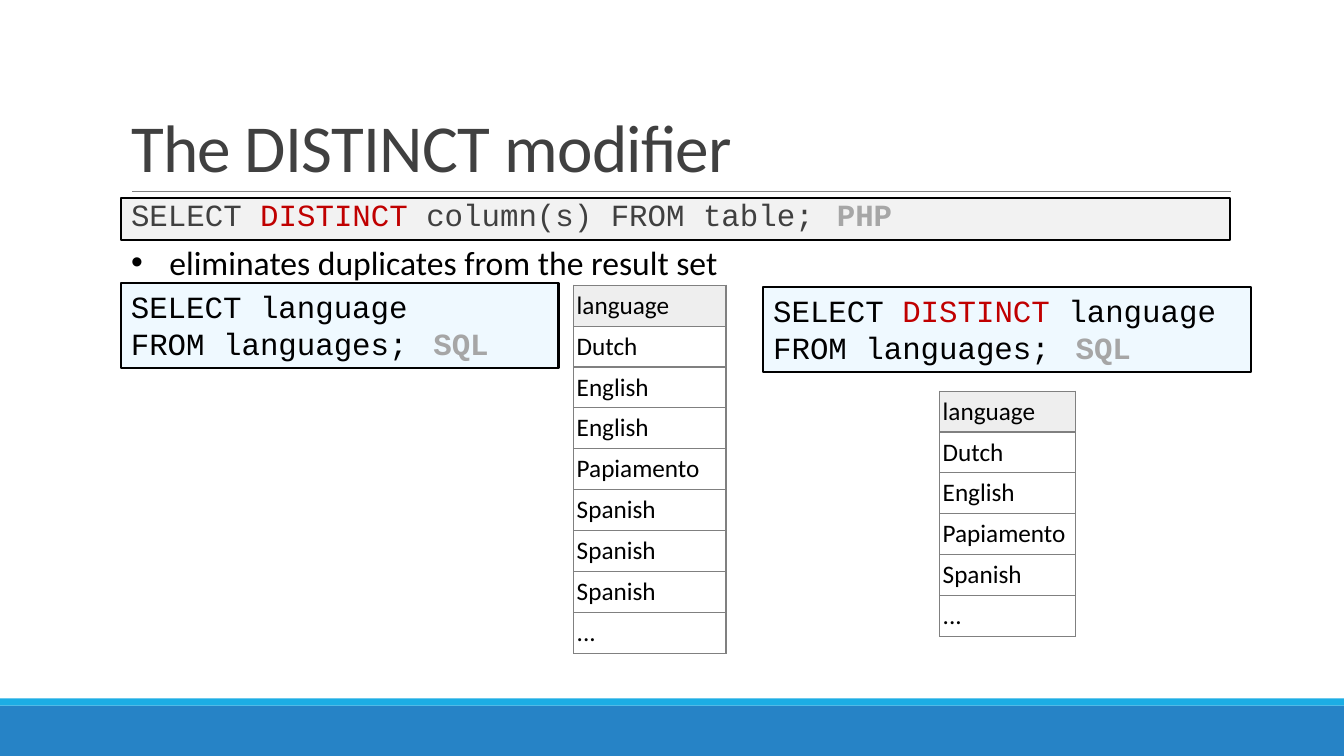
from dataclasses import dataclass

from lxml import etree
from pptx import Presentation
from pptx.dml.color import RGBColor
from pptx.enum.shapes import MSO_CONNECTOR, MSO_SHAPE
from pptx.enum.text import MSO_ANCHOR, MSO_AUTO_SIZE, PP_ALIGN
from pptx.oxml.ns import qn
from pptx.util import Inches, Pt

RECTANGLE = MSO_SHAPE.RECTANGLE
STRAIGHT = MSO_CONNECTOR.STRAIGHT
TOP, MIDDLE, BOTTOM = MSO_ANCHOR.TOP, MSO_ANCHOR.MIDDLE, MSO_ANCHOR.BOTTOM
NO_AUTOFIT = MSO_AUTO_SIZE.NONE
LEFT = PP_ALIGN.LEFT
TWO_CONTENT_LAYOUT = 3


@dataclass(frozen=True)
class Theme:
    prose_font: str = "Calibri"
    code_font: str = "Courier New"
    title_size: int = 48
    list_size: int = 24
    code_size: int = 22
    cell_size: int = 18
    black: str = "000000"
    white: str = "FFFFFF"
    soft_black: str = "404040"
    keyword: str = "C00000"
    tag: str = "A6A6A6"
    rule: str = "808080"
    syntax_fill: str = "F2F2F2"
    query_fill: str = "EFF9FF"
    header_fill: str = "EEEEEE"
    footer: str = "2683C6"
    footer_edge: str = "1CADE4"


def rgb(value):
    return RGBColor.from_string(value)


def add_run(paragraph, text, *, font, size, color, bold=False, tracking=None):
    """Append formatted text; tracking is in hundredths of a point."""
    run = paragraph.add_run()
    run.text = text
    run.font.name = font
    run.font.size = Pt(size)
    run.font.bold = bold
    run.font.color.rgb = rgb(color)
    if tracking is not None:
        run.font._element.set("spc", str(tracking))


def set_bullet(paragraph, char=None, indent=0.0):
    """Give a hanging bullet, or none when char is None."""
    properties = paragraph._p.get_or_add_pPr()
    properties.set("marL", str(Inches(indent)))
    properties.set("indent", str(-Inches(indent)))
    if char:
        etree.SubElement(properties, qn("a:buFont"), typeface="Arial")
        etree.SubElement(properties, qn("a:buChar"), char=char)
    else:
        etree.SubElement(properties, qn("a:buNone"))


def set_tab(paragraph, position):
    tabs = etree.SubElement(paragraph._p.get_or_add_pPr(), qn("a:tabLst"))
    etree.SubElement(tabs, qn("a:tab"), pos=str(Inches(position)), algn="l")


def set_borders(cell, color, width):
    properties = cell._tc.get_or_add_tcPr()
    for side in ("lnL", "lnR", "lnT", "lnB"):
        line = etree.SubElement(properties, qn(f"a:{side}"), w=str(Pt(width)))
        fill = etree.SubElement(line, qn("a:solidFill"))
        etree.SubElement(fill, qn("a:srgbClr"), val=color)


class SlideBuilder:
    """Holds the theme and the slide that is being filled."""

    def __init__(self, slide, theme):
        self.slide = slide
        self.theme = theme

    def place(self, shape, left, top, width, height, anchor=TOP):
        """Position a shape and return its text frame, ready for text."""
        shape.left, shape.top = Inches(left), Inches(top)
        shape.width, shape.height = Inches(width), Inches(height)
        frame = shape.text_frame
        frame.word_wrap = True
        frame.auto_size = NO_AUTOFIT
        frame.vertical_anchor = anchor
        return frame

    def bar(self, top, height, color):
        shape = self.slide.shapes.add_shape(
            RECTANGLE, 0, Inches(top), Inches(13.33), Inches(height))
        shape.shadow.inherit = False
        shape.fill.solid()
        shape.fill.fore_color.rgb = rgb(color)
        shape.line.fill.background()

    def rule(self, left, right, y):
        line = self.slide.shapes.add_connector(
            STRAIGHT, Inches(left), Inches(y), Inches(right), Inches(y))
        line.line.color.rgb = rgb(self.theme.rule)
        line.line.width = Pt(0.5)
        etree.SubElement(line._element.spPr, qn("a:effectLst"))

    def title(self, text, *box):
        frame = self.place(self.slide.shapes.title, *box, anchor=BOTTOM)
        paragraph = frame.paragraphs[0]
        paragraph.alignment = LEFT
        paragraph.line_spacing = 0.85
        add_run(paragraph, text, font=self.theme.prose_font,
                size=self.theme.title_size, color=self.theme.soft_black,
                tracking=-50)

    def bullet(self, text, *box):
        frame = self.place(self.slide.placeholders[2], *box)
        paragraph = frame.paragraphs[0]
        paragraph.space_before = Pt(0)
        set_bullet(paragraph, "•", 0.38)
        add_run(paragraph, text, font=self.theme.prose_font,
                size=self.theme.list_size, color=self.theme.black)

    def code(self, lines, tag, tag_offset, *box, fill, color, placeholder=None):
        """Draw a code box with DISTINCT in red and a language tag at the end."""
        theme = self.theme
        shape = placeholder or self.slide.shapes.add_shape(
            RECTANGLE, 0, 0, 0, 0)
        frame = self.place(shape, *box)
        if placeholder is None:
            shape.shadow.inherit = False
        shape.fill.solid()
        shape.fill.fore_color.rgb = rgb(fill)
        shape.line.color.rgb = rgb(theme.black)
        shape.line.width = Pt(1.5)
        style = {"font": theme.code_font, "size": theme.code_size}
        for index, line in enumerate(lines):
            paragraph = frame.add_paragraph() if index else frame.paragraphs[0]
            paragraph.alignment = LEFT
            if placeholder is not None:
                paragraph.line_spacing = 0.8
                paragraph.space_before, paragraph.space_after = Pt(12), Pt(2)
            set_bullet(paragraph)
            before, keyword, after = line.partition("DISTINCT")
            add_run(paragraph, before, color=color, **style)
            if keyword:
                add_run(paragraph, keyword, color=theme.keyword, **style)
                add_run(paragraph, after, color=color, **style)
        set_tab(paragraph, tag_offset)
        add_run(paragraph, "\t" + tag, color=theme.tag, bold=True, **style)

    def result_table(self, values, left, top, width, row_height=0.4):
        theme = self.theme
        table = self.slide.shapes.add_table(
            len(values), 1, Inches(left), Inches(top), Inches(width),
            Inches(row_height * len(values))).table
        table.first_row = table.horz_banding = False
        for index, value in enumerate(values):
            cell = table.cell(index, 0)
            cell.margin_left = cell.margin_right = Inches(0.03)
            cell.vertical_anchor = MIDDLE
            set_borders(cell, theme.rule, 1)
            cell.fill.solid()
            cell.fill.fore_color.rgb = rgb(
                theme.white if index else theme.header_fill)
            add_run(cell.text_frame.paragraphs[0], value,
                    font=theme.prose_font, size=theme.cell_size,
                    color=theme.black)


def main():
    presentation = Presentation()
    presentation.slide_width = Inches(13.33)
    presentation.slide_height = Inches(7.5)
    slide = presentation.slides.add_slide(
        presentation.slide_layouts[TWO_CONTENT_LAYOUT])
    theme = Theme()
    builder = SlideBuilder(slide, theme)

    builder.bar(7, 0.5, theme.footer)
    builder.bar(6.93, 0.07, theme.footer_edge)
    builder.rule(1.31, 12.21, 1.9)
    builder.title("The DISTINCT modifier", 1.2, 0.31, 11, 1.59)
    builder.code(["SELECT DISTINCT column(s) FROM table;"], "PHP", 10.08,
                 1.2, 1.96, 11, 0.42, fill=theme.syntax_fill,
                 color=theme.soft_black, placeholder=slide.placeholders[1])
    builder.bullet("eliminates duplicates from the result set",
                   1.2, 2.35, 6.07, 0.5)

    query_style = {"fill": theme.query_fill, "color": theme.black}
    builder.code(["SELECT language", "FROM languages;"], "SQL", 3.48,
                 1.2, 2.81, 4.34, 0.84, **query_style)
    builder.code(["SELECT DISTINCT language", "FROM languages;"], "SQL", 4.03,
                 7.57, 2.85, 4.84, 0.84, **query_style)

    all_rows = ["language", "Dutch", "English", "English", "Papiamento",
                "Spanish", "Spanish", "Spanish", "..."]
    builder.result_table(all_rows, 5.69, 2.83, 1.51)
    builder.result_table(list(dict.fromkeys(all_rows)), 9.32, 3.88, 1.35)

    presentation.save("out.pptx")


if __name__ == "__main__":
    main()
